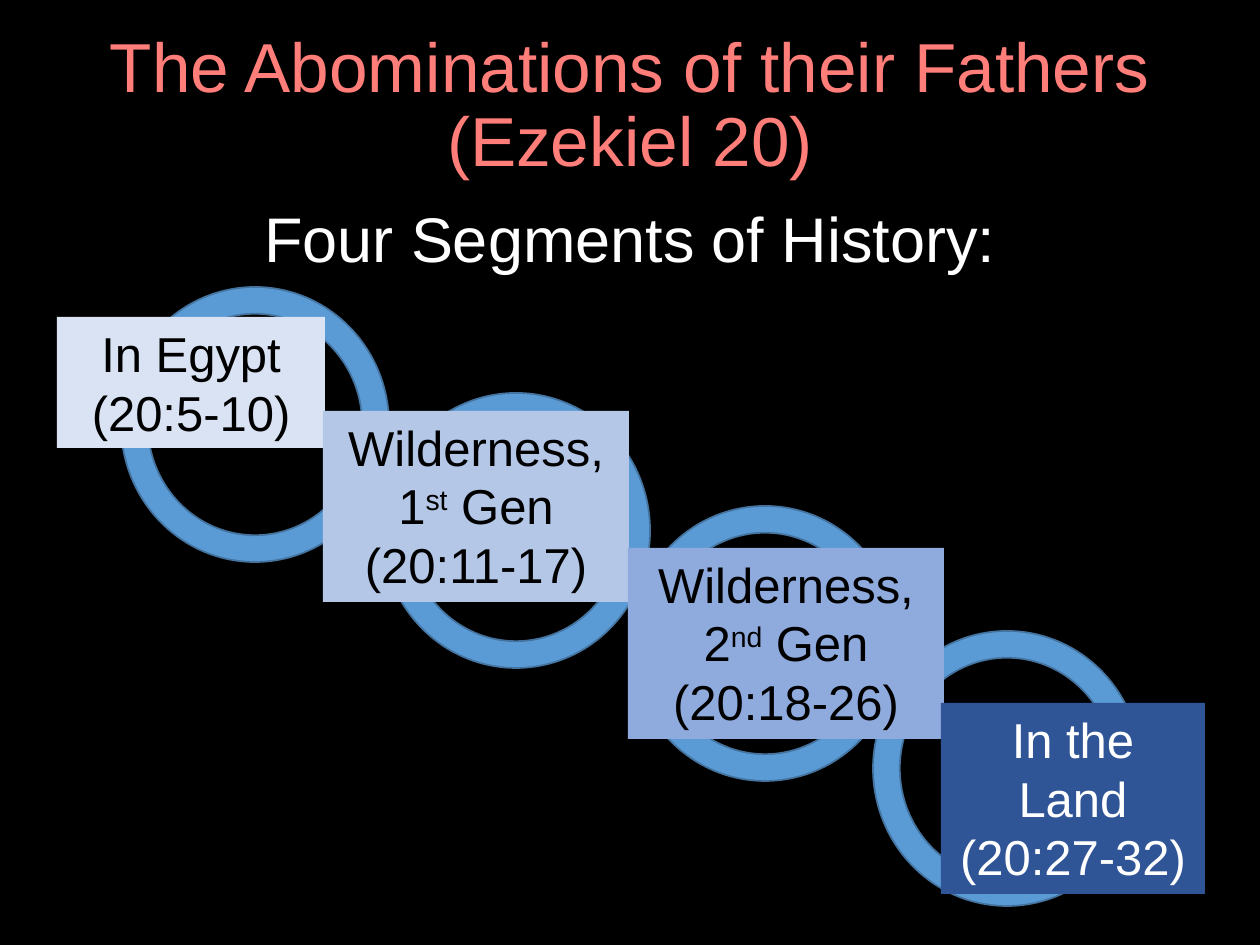
from dataclasses import dataclass

from pptx import Presentation
from pptx.dml.color import RGBColor
from pptx.enum.shapes import MSO_SHAPE
from pptx.enum.text import MSO_ANCHOR, MSO_AUTO_SIZE, PP_ALIGN
from pptx.util import Emu, Pt

CENTER = PP_ALIGN.CENTER
TOP, MIDDLE = MSO_ANCHOR.TOP, MSO_ANCHOR.MIDDLE
NO_FIT = MSO_AUTO_SIZE.NONE
DONUT, RECTANGLE = MSO_SHAPE.DONUT, MSO_SHAPE.RECTANGLE
PX_PER_INCH = 126
FONT = "Arial"
COLORS = {
    "background": "000000",
    "title": "FF7E79",
    "light": "FFFFFF",
    "dark": "000000",
    "ring": "5B9BD5",
    "ring_line": "43739E",
    "egypt": "DAE3F3",
    "first": "B4C7E7",
    "second": "8FAADC",
    "land": "2F5597",
}
RING_WIDTH, RING_HEIGHT = 268, 275


@dataclass(frozen=True)
class Ring:
    left: int
    top: int


@dataclass(frozen=True)
class Segment:
    left: int
    top: int
    width: int
    height: int
    fill: str
    paragraphs: tuple[tuple[str, ...], ...]
    color: str = "dark"


RINGS = (Ring(382, 393), Ring(873, 631), Ring(631, 506), Ring(121, 287))
SEGMENTS = (
    Segment(57, 317, 268, 131, "egypt", (("In Egypt (20:5-10)",),)),
    Segment(323, 411, 306, 191, "first",
            (("Wilderness, 1", "st", " Gen (20:11-17)"),)),
    Segment(628, 548, 316, 191, "second",
            (("Wilderness, 2", "nd", " Gen"), ("(20:18-26)",))),
    Segment(941, 703, 264, 191, "land",
            (("In the Land (20:27-32)",),), "light"),
)


def px(length: int) -> Emu:
    return Emu(round(length * 914400 / PX_PER_INCH))


def rgb(name: str) -> RGBColor:
    return RGBColor.from_string(COLORS[name])


def add_span(para, text: str, *, size: float, color: str,
             superscript: bool = False) -> None:
    span = para.add_run()
    span.text = text
    span.font.name = FONT
    span.font.size = Pt(size)
    span.font.color.rgb = rgb(color)
    if superscript:
        span._r.get_or_add_rPr().set("baseline", "30000")


def write(box, paragraphs: tuple[tuple[str, ...], ...], *, size: float,
          color: str, anchor=TOP, line_spacing: float = 1.0,
          before: int = 0, after: int = 0) -> None:
    frame = box.text_frame
    frame.word_wrap = True
    frame.auto_size = NO_FIT
    frame.vertical_anchor = anchor
    for index, parts in enumerate(paragraphs):
        para = frame.add_paragraph() if index else frame.paragraphs[0]
        para.alignment = CENTER
        para.line_spacing = line_spacing
        para.space_before, para.space_after = Pt(before), Pt(after)
        for position, text in enumerate(parts):
            add_span(para, text, size=size, color=color,
                     superscript=position == 1)


def draw_ring(page, ring: Ring) -> None:
    donut = page.shapes.add_shape(DONUT, px(ring.left), px(ring.top),
                                  px(RING_WIDTH), px(RING_HEIGHT))
    donut.adjustments[0] = 0.1
    donut.shadow.inherit = False
    donut.fill.solid()
    donut.fill.fore_color.rgb = rgb("ring")
    donut.line.color.rgb = rgb("ring_line")
    donut.line.width = Pt(1)


def draw_segment(page, segment: Segment) -> None:
    box = page.shapes.add_shape(RECTANGLE, px(segment.left), px(segment.top),
                                px(segment.width), px(segment.height))
    box.shadow.inherit = False
    box.fill.solid()
    box.fill.fore_color.rgb = rgb(segment.fill)
    box.line.fill.background()
    write(box, segment.paragraphs, size=28, color=segment.color)


def main() -> None:
    deck = Presentation()
    deck.slide_width, deck.slide_height = px(1260), px(945)
    page = deck.slides.add_slide(deck.slide_layouts.get_by_name("Title Only"))
    page.background.fill.solid()
    page.background.fill.fore_color.rgb = rgb("background")

    title = page.shapes.title
    title.left, title.top = px(87), px(20)
    title.width, title.height = px(1086), px(174)
    write(title, (("The Abominations of their Fathers (Ezekiel 20)",),),
          size=39.6, color="title", anchor=MIDDLE, line_spacing=0.9)

    heading = page.shapes.add_textbox(px(87), px(193), px(1086), px(700))
    write(heading, (("Four Segments of History:",),),
          size=36, color="light", before=4, after=6)

    for ring in RINGS:
        draw_ring(page, ring)
    for segment in SEGMENTS:
        draw_segment(page, segment)
    deck.save("out.pptx")


if __name__ == "__main__":
    main()
